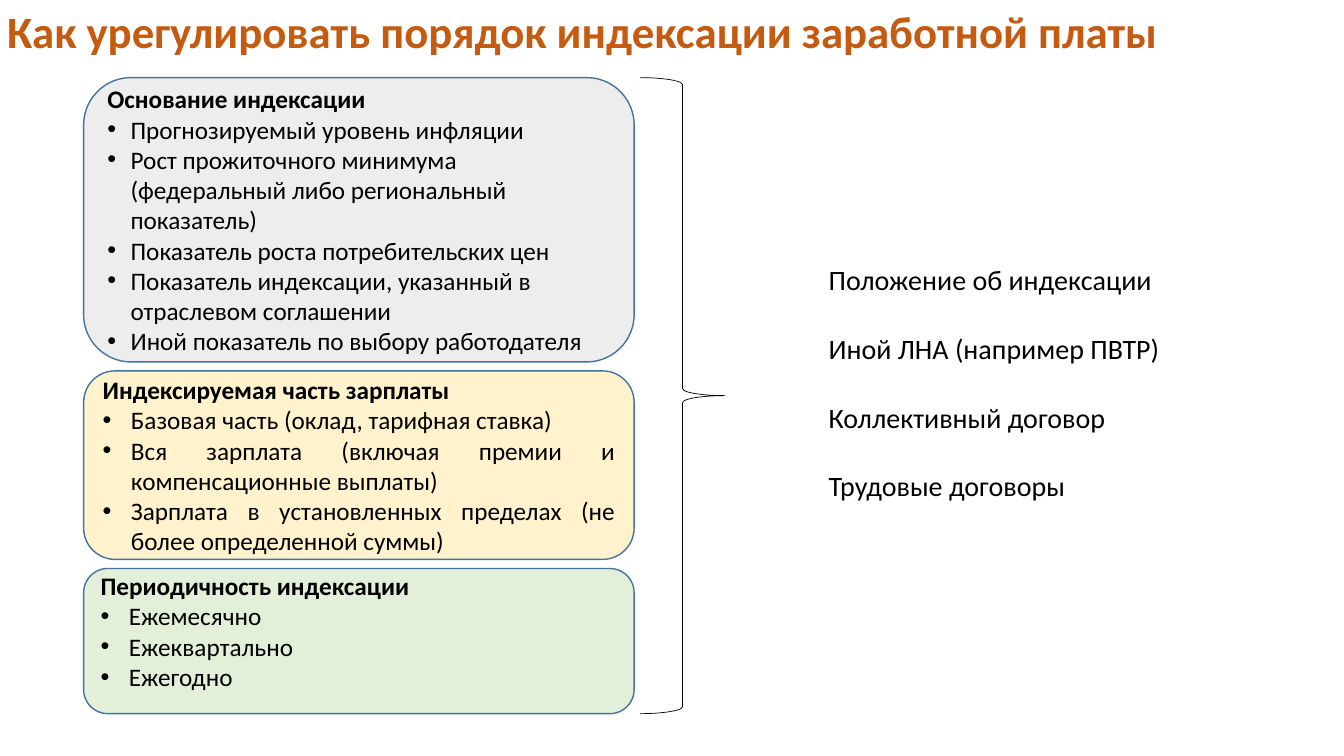
from dataclasses import dataclass

from lxml.etree import SubElement
from pptx import Presentation
from pptx.dml.color import RGBColor
from pptx.enum.shapes import MSO_SHAPE
from pptx.enum.text import MSO_ANCHOR, MSO_AUTO_SIZE, PP_ALIGN
from pptx.oxml.ns import qn
from pptx.util import Inches, Pt


@dataclass(frozen=True)
class Theme:
    font: str = "Calibri"
    title_size: int = 32
    document_size: int = 20
    box_size: int = 18
    title: str = "C55A11"
    text: str = "000000"
    outline: str = "43739E"
    brace: str = "000000"
    paper: str = "FFFFFF"
    basis: str = "EDEDED"
    indexed_part: str = "FFF2CC"
    frequency: str = "E2F0D9"


THEME = Theme()
BOX_LEFT, BOX_WIDTH = 0.83, 5.46
STACK_TOP, STACK_HEIGHT = 0.77, 6.31

BOXES = [
    {
        "top": STACK_TOP, "height": 2.82, "fill": THEME.basis,
        "heading": "Основание индексации",
        "items": [
            "Прогнозируемый уровень инфляции",
            "Рост прожиточного минимума (федеральный либо региональный показатель)",
            "Показатель роста потребительских цен",
            "Показатель индексации, указанный в отраслевом соглашении",
            "Иной показатель по выбору работодателя",
        ],
        "indent": 0.23, "item_align": PP_ALIGN.LEFT,
    },
    {
        "top": 3.68, "height": 1.87, "fill": THEME.indexed_part,
        "heading": "Индексируемая часть зарплаты",
        "items": [
            "Базовая часть (оклад, тарифная ставка)",
            "Вся зарплата (включая премии и компенсационные выплаты)",
            "Зарплата в установленных пределах (не более определенной суммы)",
        ],
    },
    {
        "top": 5.64, "height": 1.44, "fill": THEME.frequency,
        "heading": "Периодичность индексации",
        "items": ["Ежемесячно", "Ежеквартально", "Ежегодно"],
        "bottom_inset": 0.25,
    },
]

DOCUMENTS = [
    ("Положение об индексации", 3.79),
    ("Иной ЛНА (например ПВТР)", 3.51),
    ("Коллективный договор", 3.43),
    ("Трудовые договоры", 2.63),
]
DOCUMENT_LEFT, DOCUMENT_TOP, DOCUMENT_STEP = 8.12, 2.56, 0.68


def apply_format(target, values):
    for name, value in values.items():
        setattr(target, name, value)


def write(paragraph, text, size, color, bold=False, align=PP_ALIGN.LEFT):
    paragraph.alignment = align
    run = paragraph.add_run()
    run.text = text
    apply_format(run.font, {"name": THEME.font, "size": Pt(size), "bold": bold})
    run.font.color.rgb = RGBColor.from_string(color)


def add_bullet(paragraph, indent):
    properties = paragraph._p.get_or_add_pPr()
    properties.set("marL", str(Inches(indent)))
    properties.set("indent", str(-Inches(indent)))
    SubElement(properties, qn("a:buFont"), typeface="Arial")
    SubElement(properties, qn("a:buChar"), char="•")


def add_outlined(slide, kind, bounds, fill, outline, weight):
    outlined = slide.shapes.add_shape(kind, *map(Inches, bounds))
    outlined.shadow.inherit = False
    outlined.fill.solid()
    outlined.fill.fore_color.rgb = RGBColor.from_string(fill)
    outlined.line.color.rgb = RGBColor.from_string(outline)
    outlined.line.width = Pt(weight)
    return outlined


def add_box(slide, top, height, fill, heading, items, indent=0.28,
            item_align=PP_ALIGN.JUSTIFY, bottom_inset=0.05):
    box = add_outlined(slide, MSO_SHAPE.ROUNDED_RECTANGLE,
                       (BOX_LEFT, top, BOX_WIDTH, height), fill, THEME.outline, 1)
    frame = box.text_frame
    apply_format(frame, {
        "word_wrap": True,
        "vertical_anchor": MSO_ANCHOR.MIDDLE,
        "margin_bottom": Inches(bottom_inset),
    })
    write(frame.paragraphs[0], heading, THEME.box_size, THEME.text, True, PP_ALIGN.JUSTIFY)
    for item in items:
        paragraph = frame.add_paragraph()
        write(paragraph, item, THEME.box_size, THEME.text, align=item_align)
        add_bullet(paragraph, indent)


def add_label(slide, text, bounds, size, color, bold=False, **frame_format):
    frame = slide.shapes.add_textbox(*map(Inches, bounds)).text_frame
    apply_format(frame, {"word_wrap": True, **frame_format})
    write(frame.paragraphs[0], text, size, color, bold)


def main():
    presentation = Presentation()
    apply_format(presentation, {"slide_width": Inches(13.33), "slide_height": Inches(7.5)})
    slide = presentation.slides.add_slide(presentation.slide_layouts[6])

    for box in BOXES:
        add_box(slide, **box)

    add_label(slide, "Как урегулировать порядок индексации заработной платы",
              (0, 0, 13.33, 0.77), THEME.title_size, THEME.title, True,
              margin_left=Inches(0.07), margin_right=Inches(0.07),
              margin_top=Inches(0.04), margin_bottom=Inches(0.04))

    add_outlined(slide, MSO_SHAPE.RIGHT_BRACE, (6.35, STACK_TOP, 0.84, STACK_HEIGHT),
                 THEME.paper, THEME.brace, 0.5)

    for row, (document, width) in enumerate(DOCUMENTS):
        add_label(slide, document,
                  (DOCUMENT_LEFT, DOCUMENT_TOP + row * DOCUMENT_STEP, width, 0.44),
                  THEME.document_size, THEME.text,
                  auto_size=MSO_AUTO_SIZE.SHAPE_TO_FIT_TEXT)

    presentation.save("out.pptx")


if __name__ == "__main__":
    main()
